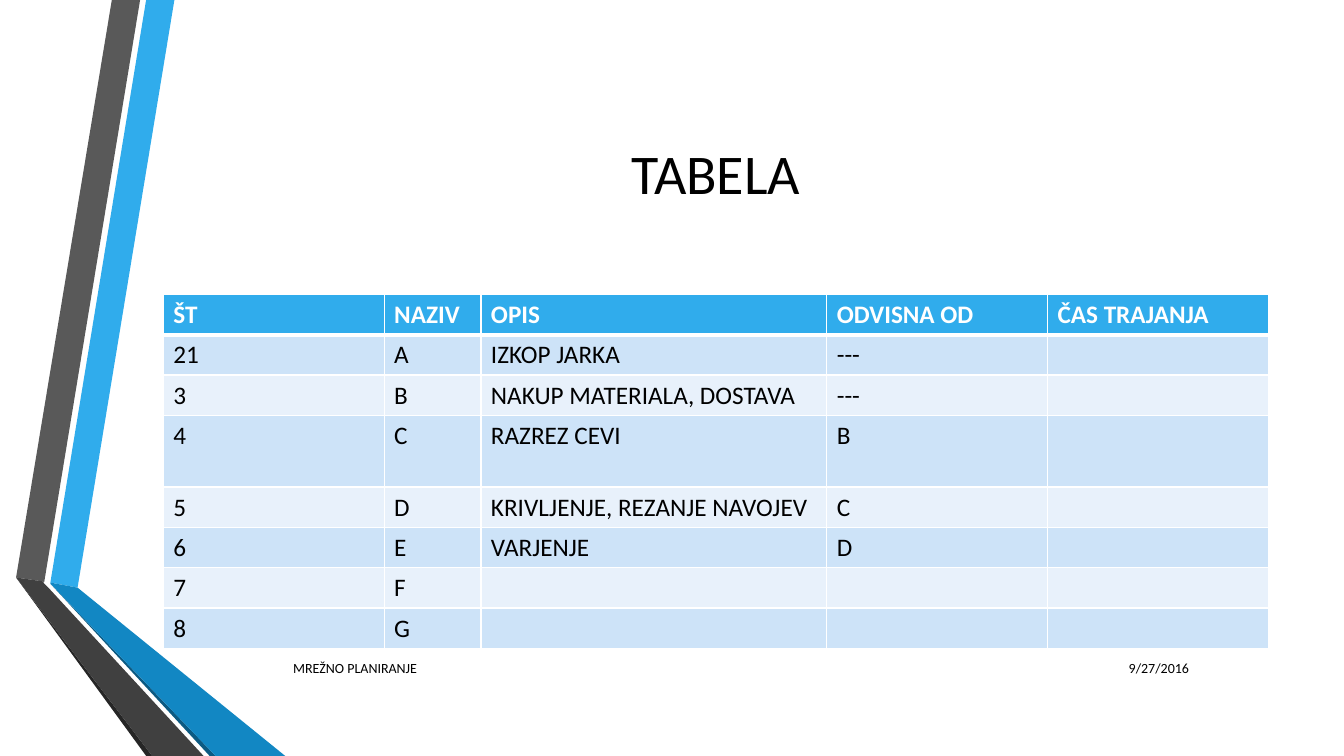
import pptx
import pptx.dml.color
import pptx.enum.text
import pptx.oxml
import pptx.oxml.ns
import pptx.util

Inches = pptx.util.Inches
RGBColor = pptx.dml.color.RGBColor
Align = pptx.enum.text.PP_ALIGN

BLACK = RGBColor(0x00, 0x00, 0x00)
WHITE = RGBColor(0xFF, 0xFF, 0xFF)
BLUE = RGBColor(0x30, 0xAC, 0xEC)
MID_BLUE = RGBColor(0x12, 0x87, 0xC3)
DARK_BLUE = RGBColor(0x0C, 0x5A, 0x82)
GREY = RGBColor(0x59, 0x59, 0x59)
DARK_GREY = RGBColor(0x40, 0x40, 0x40)
CHARCOAL = RGBColor(0x26, 0x26, 0x26)
BAND_DARK = RGBColor(0xCD, 0xE3, 0xF8)
BAND_LIGHT = RGBColor(0xE8, 0xF1, 0xFB)

RIBBONS = [
    (BLUE, [(0.5, 5.78), (0.77, 5.83), (1.73, 0), (1.45, 0)]),
    (GREY, [(1.39, 0), (1.11, 0), (0.16, 5.73), (0.44, 5.77)]),
    (CHARCOAL, [(0.16, 5.73), (1.45, 7.5), (1.51, 7.5)]),
    (DARK_BLUE, [(0.5, 5.79), (2.08, 7.5), (2.14, 7.5)]),
    (MID_BLUE, [(0.5, 5.78), (0.5, 5.79), (2.14, 7.5), (2.83, 7.5), (0.77, 5.83)]),
    (DARK_GREY, [(2.02, 7.5), (0.48, 5.83), (0.43, 5.78), (0.44, 5.77),
                 (0.16, 5.73), (1.51, 7.5)]),
]
COLUMN_WIDTHS = [2.19, 0.96, 3.43, 2.19, 2.19]
ROW_HEIGHTS = [0.4, 0.4, 0.4, 0.71, 0.4, 0.4, 0.4, 0.4]
ACTIVITIES = [
    ["ŠT", "NAZIV", "OPIS", "ODVISNA OD", "ČAS TRAJANJA"],
    ["21", "A", "IZKOP JARKA", "---", ""],
    ["3", "B", "NAKUP MATERIALA, DOSTAVA", "---", ""],
    ["4", "C", "RAZREZ CEVI", "B", ""],
    ["5", "D", "KRIVLJENJE, REZANJE NAVOJEV", "C", ""],
    ["6", "E", "VARJENJE", "D", ""],
    ["7", "F", "", "", ""],
    ["8", "G", "", "", ""],
]


class SlideBuilder:
    """Holds the font and the current page, and draws each kind of element."""

    def __init__(self, page, font):
        self.page = page
        self.font = font

    def add_span(self, para, text, size, color=BLACK, bold=False):
        span = para.add_run()
        span.text = text
        span.font.name = self.font
        span.font.size = pptx.util.Pt(size)
        span.font.color.rgb = color
        span.font.bold = bold

    def ribbon(self, color, points):
        corners = [(Inches(x), Inches(y)) for x, y in points]
        outline = self.page.shapes.build_freeform(*corners[0])
        outline.add_line_segments(corners[1:], close=True)
        shape = outline.convert_to_shape()
        shape.shadow.inherit = False
        shape.fill.solid()
        shape.fill.fore_color.rgb = color
        shape.line.fill.background()

    def text(self, left, top, width, height, text, size, align):
        box = self.page.shapes.add_textbox(
            Inches(left), Inches(top), Inches(width), Inches(height))
        frame = box.text_frame
        frame.word_wrap = True
        frame.vertical_anchor = pptx.enum.text.MSO_ANCHOR.MIDDLE
        para = frame.paragraphs[0]
        para.alignment = align
        self.add_span(para, text, size)

    def border(self, cell, side, points):
        namespace = pptx.oxml.ns.nsdecls("a")
        cell._tc.get_or_add_tcPr().append(pptx.oxml.parse_xml(
            f'<a:{side} {namespace} w="{pptx.util.Pt(points)}"><a:solidFill>'
            f'<a:srgbClr val="{WHITE}"/></a:solidFill></a:{side}>'))

    def table(self, left, top, widths, heights, rows):
        grid = self.page.shapes.add_table(
            len(rows), len(widths), Inches(left), Inches(top),
            Inches(sum(widths)), Inches(sum(heights))).table
        for column, width in zip(grid.columns, widths):
            column.width = Inches(width)
        for index, (row, height, texts) in enumerate(zip(grid.rows, heights, rows)):
            row.height = Inches(height)
            header = index == 0
            band = BAND_DARK if index % 2 else BAND_LIGHT
            for cell, text in zip(row.cells, texts):
                for side in ("lnL", "lnR", "lnT", "lnB"):
                    thick = (header and side == "lnB") or (index == 1 and side == "lnT")
                    self.border(cell, side, 3 if thick else 1)
                cell.fill.solid()
                cell.fill.fore_color.rgb = BLUE if header else band
                if text:
                    self.add_span(cell.text_frame.paragraphs[0], text, 18,
                                  WHITE if header else BLACK, header)


def main():
    deck = pptx.Presentation()
    deck.slide_width = Inches(13.33)
    deck.slide_height = Inches(7.5)
    builder = SlideBuilder(deck.slides.add_slide(deck.slide_layouts[6]), "Calibri")
    for color, points in RIBBONS:
        builder.ribbon(color, points)
    builder.text(1.62, 0.75, 10.96, 1.92, "TABELA", 40, Align.CENTER)
    builder.table(1.62, 2.92, COLUMN_WIDTHS, ROW_HEIGHTS, ACTIVITIES)
    builder.text(10.64, 6.43, 1.25, 0.4, "9/27/2016", 10, Align.RIGHT)
    builder.text(2.81, 6.43, 7.75, 0.4, "MREŽNO PLANIRANJE", 10, Align.LEFT)
    deck.save("out.pptx")


if __name__ == "__main__":
    main()
